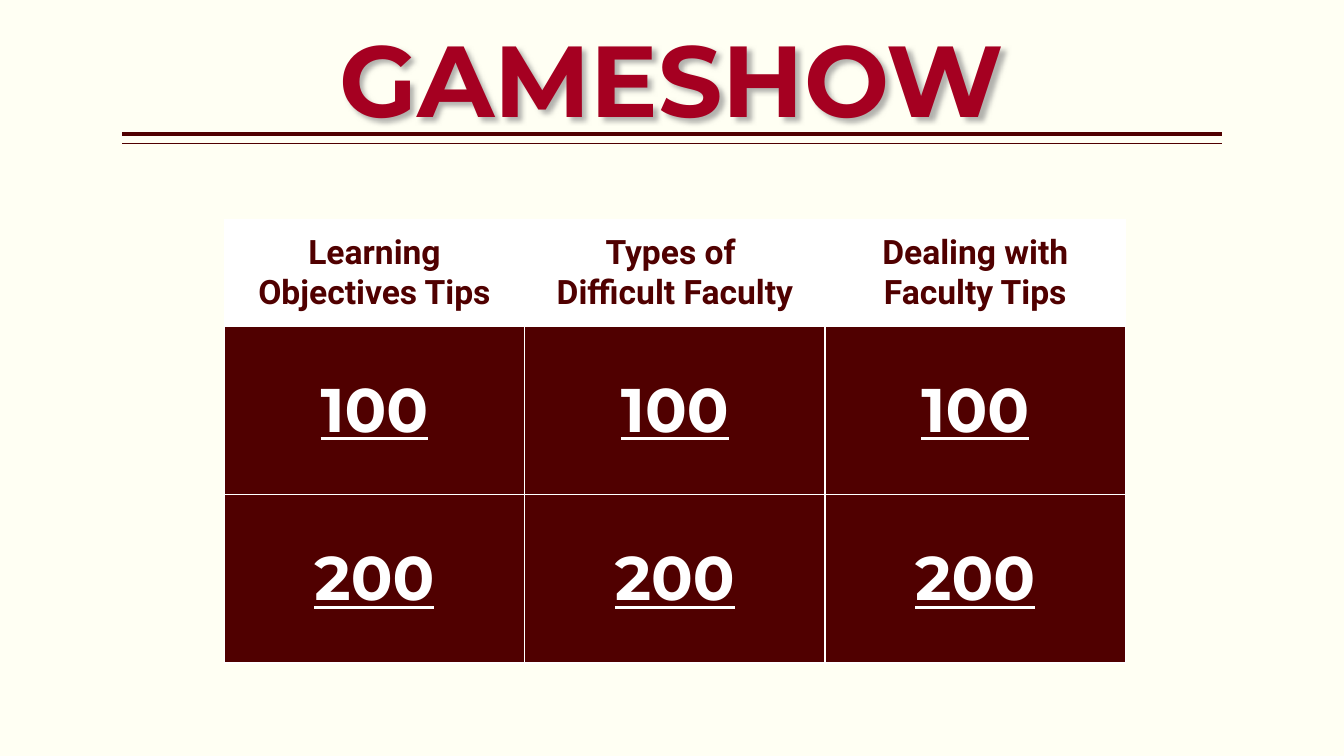
from dataclasses import dataclass

from lxml import etree
from pptx import Presentation
from pptx.dml.color import RGBColor
from pptx.enum.shapes import MSO_CONNECTOR
from pptx.enum.text import MSO_ANCHOR, PP_ALIGN
from pptx.oxml.ns import qn
from pptx.util import Pt

STRAIGHT = MSO_CONNECTOR.STRAIGHT
CENTER = PP_ALIGN.CENTER
MIDDLE = MSO_ANCHOR.MIDDLE
BOTTOM = MSO_ANCHOR.BOTTOM
BLANK_LAYOUT = 6


@dataclass(frozen=True)
class Theme:
    cream: str = "FFFFF3"
    maroon: str = "500000"
    crimson: str = "A50021"
    white: str = "FFFFFF"
    shadow: str = "808080"
    display_font: str = "Montserrat"
    heading_font: str = "Roboto"
    title_size: int = 72
    heading_size: int = 24
    points_size: int = 44


THEME = Theme()

BOARD = [
    ["Learning Objectives Tips", "Types of \vDifficult Faculty", "Dealing with Faculty Tips"],
    ["100"] * 3,
    ["200"] * 3,
]
COLUMN_WIDTH = 214.6
ROW_HEIGHTS = [76, 120.3, 120.3]


def rgb(code):
    return RGBColor.from_string(code)


def add_node(parent, tag, **attributes):
    return etree.SubElement(parent, qn(tag), attributes)


def style_para(para, font_name, size, color, underline=False):
    para.alignment = CENTER
    for span in para.runs:
        font = span.font
        font.name, font.size, font.bold = font_name, Pt(size), True
        font.color.rgb = rgb(color)
        if underline:
            font.underline = True


def add_rule(page, y, weight):
    rule = page.shapes.add_connector(STRAIGHT, Pt(87.2), Pt(y), Pt(873), Pt(y))
    rule.line.color.rgb = rgb(THEME.maroon)
    rule.line.width = Pt(weight)
    add_node(rule._element.spPr, "a:effectLst")


def add_soft_shadow(box):
    effects = add_node(box._element.spPr, "a:effectLst")
    shadow = add_node(effects, "a:outerShdw", blurRad=str(Pt(3)), dist=str(Pt(3)),
                      dir="2700000", algn="tl", rotWithShape="0")
    color = add_node(shadow, "a:srgbClr", val=THEME.shadow)
    add_node(color, "a:alpha", val="60000")


def add_title(page, text):
    box = page.shapes.add_textbox(Pt(210), Pt(-2), Pt(540), Pt(103.7))
    frame = box.text_frame
    frame.word_wrap = True
    frame.vertical_anchor = BOTTOM
    frame.margin_left = frame.margin_right = 0
    frame.text = text
    para = frame.paragraphs[0]
    para.line_spacing = 1.07
    para.space_after = Pt(6)
    style_para(para, THEME.display_font, THEME.title_size, THEME.crimson)
    add_soft_shadow(box)


def add_borders(cell):
    properties = cell._tc.get_or_add_tcPr()
    for side in ("a:lnL", "a:lnR", "a:lnT", "a:lnB"):
        border = add_node(properties, side, w=str(Pt(1)))
        fill = add_node(border, "a:solidFill")
        add_node(fill, "a:srgbClr", val=THEME.white)


def fill_cell(cell, text, is_heading):
    add_borders(cell)
    cell.fill.solid()
    cell.fill.fore_color.rgb = rgb(THEME.white if is_heading else THEME.maroon)
    cell.vertical_anchor = MIDDLE
    cell.text_frame.text = text
    para = cell.text_frame.paragraphs[0]
    if is_heading:
        style_para(para, THEME.heading_font, THEME.heading_size, THEME.maroon)
    else:
        style_para(para, THEME.display_font, THEME.points_size, THEME.white, underline=True)


def add_board(page, rows):
    columns = len(rows[0])
    table = page.shapes.add_table(
        len(rows), columns, Pt(160.2), Pt(157),
        Pt(COLUMN_WIDTH * columns), Pt(sum(ROW_HEIGHTS))).table
    for column in table.columns:
        column.width = Pt(COLUMN_WIDTH)
    for row, height in zip(table.rows, ROW_HEIGHTS):
        row.height = Pt(height)
    for r, texts in enumerate(rows):
        for c, text in enumerate(texts):
            fill_cell(table.cell(r, c), text, is_heading=r == 0)


def main():
    deck = Presentation()
    deck.slide_width, deck.slide_height = Pt(960), Pt(540)
    page = deck.slides.add_slide(deck.slide_layouts[BLANK_LAYOUT])
    page.background.fill.solid()
    page.background.fill.fore_color.rgb = rgb(THEME.cream)

    # Double rule under the title
    add_rule(page, 95.8, 3)
    add_rule(page, 102.7, 1)

    # Title
    add_title(page, "GAMESHOW")

    # Question board
    add_board(page, BOARD)

    deck.save("out.pptx")


if __name__ == "__main__":
    main()
